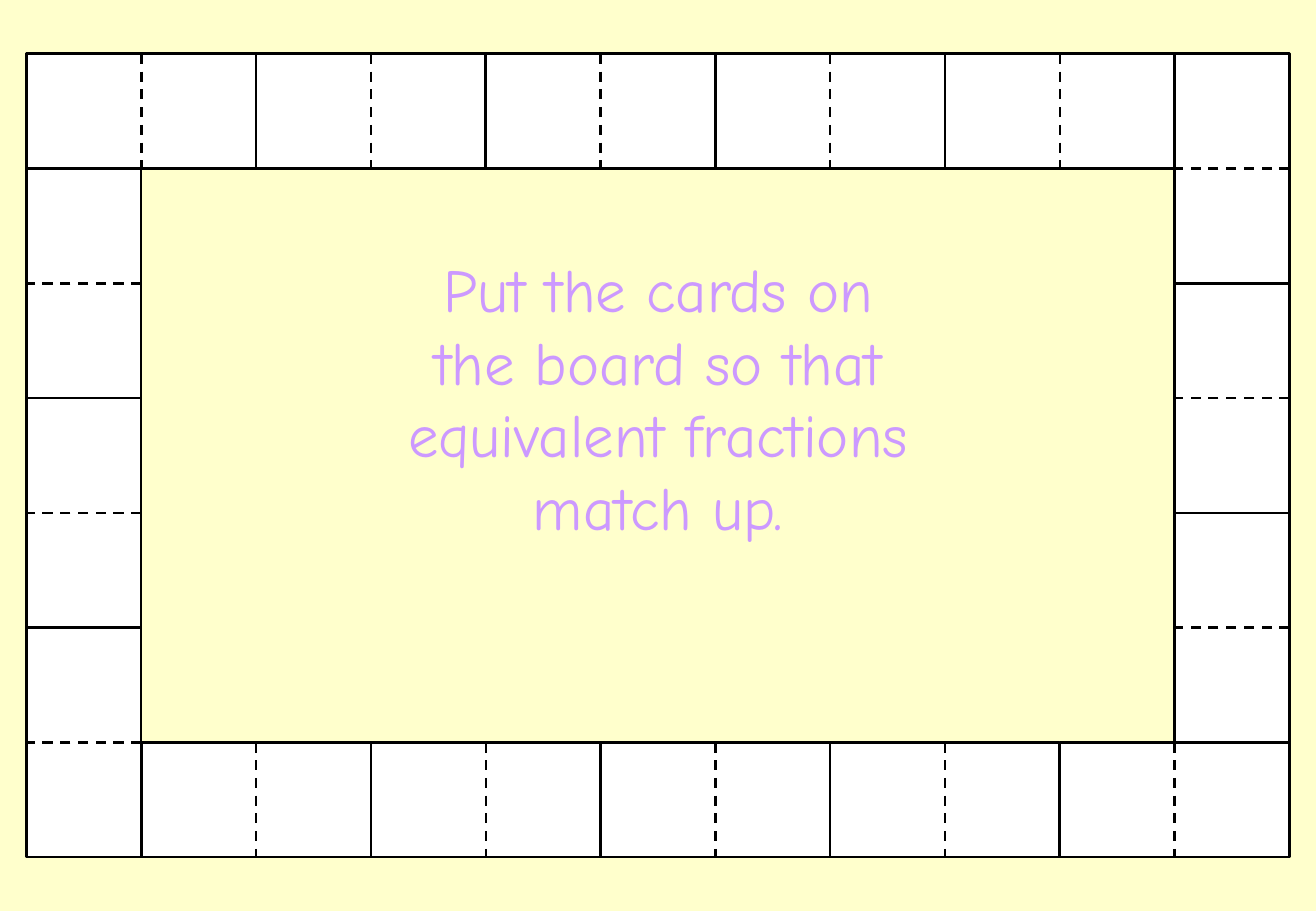
import pptx
import pptx.dml.color
import pptx.enum.dml
import pptx.enum.shapes
import pptx.enum.text
import pptx.util
from dataclasses import dataclass
from lxml import etree

Pt = pptx.util.Pt
RGB = pptx.dml.color.RGBColor.from_string


@dataclass(frozen=True)
class Theme:
    background: str = "FFFFCC"
    card: str = "FFFFFF"
    line: str = "000000"
    text: str = "CC99FF"
    font: str = "Comic Neue"
    text_size: float = 36
    line_width: float = 1.5


THEME = Theme()
SLIDE_W, SLIDE_H = 779.76, 540
CELL = 68.03
COLS, ROWS = 11, 7


def style_line(line):
    line.color.rgb = RGB(THEME.line)
    line.width = Pt(THEME.line_width)


def add_text(tf, text, *, size, color, font, align):
    for i, row in enumerate(text.split("\n")):
        p = tf.paragraphs[0] if i == 0 else tf.add_paragraph()
        p.alignment = align
        r = p.add_run()
        r.text = row
        r.font.size = Pt(size)
        r.font.name = font
        r.font.color.rgb = RGB(color)


def add_card(s, x, y, w, h):
    """A card of two square halves, with a dashed fold across its long side."""
    card = s.shapes.add_group_shape()
    sp = card.shapes.add_shape(pptx.enum.shapes.MSO_SHAPE.RECTANGLE, Pt(x), Pt(y), Pt(w), Pt(h))
    sp.shadow.inherit = False
    sp.fill.solid()
    sp.fill.fore_color.rgb = RGB(THEME.card)
    style_line(sp.line)

    if w > h:
        ends = (x + w / 2, y, x + w / 2, y + h)
    else:
        ends = (x + w, y + h / 2, x, y + h / 2)
    fold = card.shapes.add_connector(pptx.enum.shapes.MSO_CONNECTOR.STRAIGHT, *map(Pt, ends))
    style_line(fold.line)
    fold.line.dash_style = pptx.enum.dml.MSO_LINE.DASH
    etree.SubElement(fold._element.spPr, pptx.oxml.ns.qn("a:effectLst"))


def add_board(s, x, y):
    """A ring of cards; each side starts where the one before it ends."""
    across, down = (2, 1), (1, 2)
    top = [(col, 0, across) for col in range(0, COLS - 1, 2)]
    right = [(COLS - 1, row, down) for row in range(0, ROWS - 1, 2)]
    left = [(0, row, down) for row in range(1, ROWS, 2)]
    bottom = [(col, ROWS - 1, across) for col in range(1, COLS, 2)]
    for col, row, (w, h) in top + right + left + bottom:
        add_card(s, x + col * CELL, y + row * CELL, w * CELL, h * CELL)


def add_instructions(s, x, y, w, h):
    tf = s.shapes.add_textbox(Pt(x), Pt(y), Pt(w), Pt(h)).text_frame
    tf.word_wrap = False
    add_text(tf, "Put the cards on\nthe board so that\nequivalent fractions\nmatch up.",
             size=THEME.text_size, color=THEME.text, font=THEME.font,
             align=pptx.enum.text.PP_ALIGN.CENTER)


def main():
    prs = pptx.Presentation()
    prs.slide_width, prs.slide_height = Pt(SLIDE_W), Pt(SLIDE_H)
    s = prs.slides.add_slide(prs.slide_layouts[6])
    s.background.fill.solid()
    s.background.fill.fore_color.rgb = RGB(THEME.background)

    # Board, centred on the slide
    add_board(s, (SLIDE_W - COLS * CELL) / 2, (SLIDE_H - ROWS * CELL) / 2)

    # Instructions inside the ring
    text_w = 431
    add_instructions(s, (SLIDE_W - text_w) / 2, 145.5, text_w, 260.5)

    prs.save("out.pptx")


if __name__ == "__main__":
    main()
